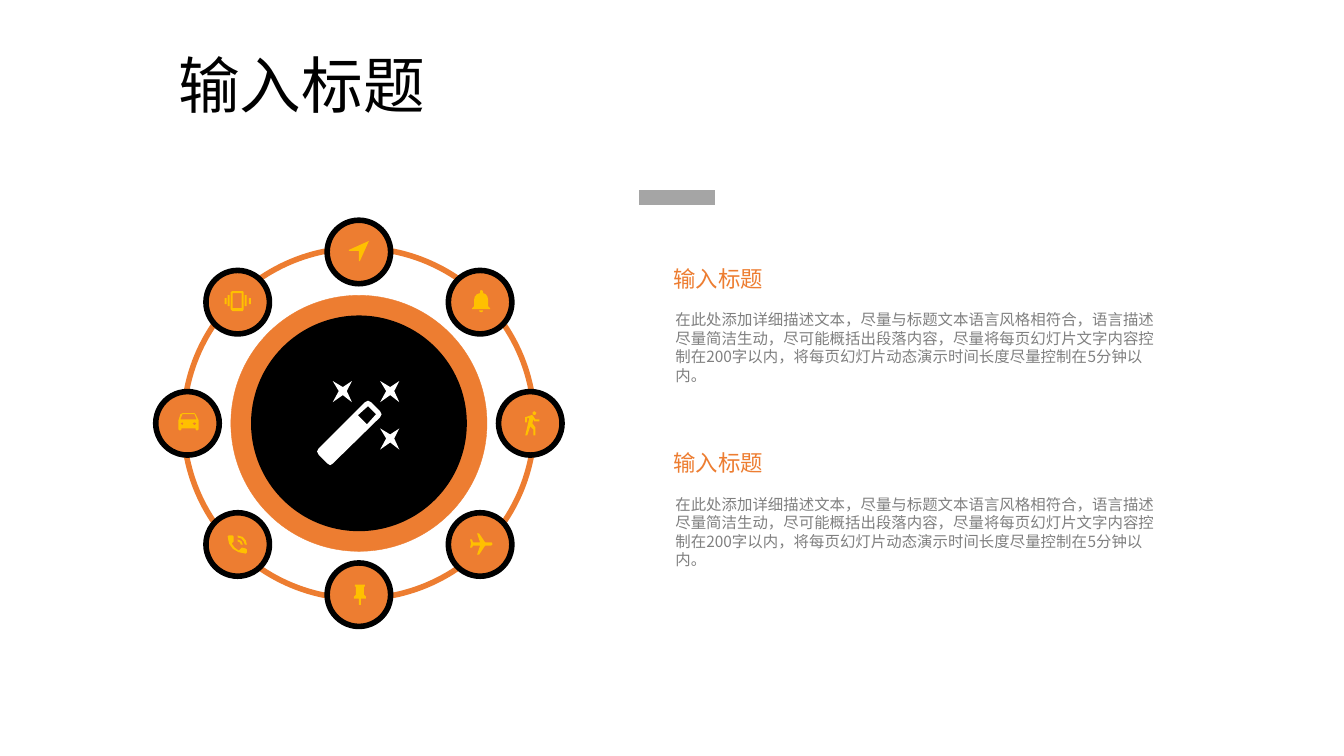
import math
from lxml import etree
from pptx import Presentation
from pptx.dml.color import RGBColor
from pptx.enum.shapes import MSO_CONNECTOR, MSO_SHAPE
from pptx.enum.text import MSO_ANCHOR
from pptx.oxml.ns import qn
from pptx.util import Inches, Pt

OVAL = MSO_SHAPE.OVAL
STRAIGHT = MSO_CONNECTOR.STRAIGHT
TOP, MIDDLE = MSO_ANCHOR.TOP, MSO_ANCHOR.MIDDLE
ORANGE, BLACK, WHITE, AMBER = "ED7D31", "000000", "FFFFFF", "FFC000"
GREY, BAR = "808080", "A5A5A5"
FONT = "Noto Sans CJK SC"
CX, CY, ORBIT = 3.56, 4.2, 1.7  # centre of the wheel and radius of the badges

prs = Presentation()
prs.slide_width, prs.slide_height = Inches(13.33), Inches(7.5)
s = prs.slides.add_slide(prs.slide_layouts[6])


def paint(sp, fill=None, line=None, width=0):
    sp.shadow.inherit = False
    if fill:
        sp.fill.solid()
        sp.fill.fore_color.rgb = RGBColor.from_string(fill)
    else:
        sp.fill.background()
    if line:
        sp.line.color.rgb = RGBColor.from_string(line)
        sp.line.width = Pt(width)
    else:
        sp.line.fill.background()


def outline(x, y, contours, color):
    """Draw closed contours, in hundredths of an inch around (x, y)."""
    builder = None
    for contour in contours:
        pts = [(px * 10, py * 10) for px, py in contour]
        if builder is None:
            builder = s.shapes.build_freeform(*pts[0], scale=914.4)
        else:
            builder.move_to(*pts[0])
        builder.add_line_segments(pts[1:], close=True)
    paint(builder.convert_to_shape(Inches(x), Inches(y)), color)


# Grey bar
bar = s.shapes.add_connector(STRAIGHT, Inches(6.34), Inches(1.96), Inches(7.09), Inches(1.96))
bar.line.color.rgb = RGBColor.from_string(BAR)
bar.line.width = Pt(11)
etree.SubElement(bar._element.spPr, qn("a:effectLst"))

# Hub and orbit, then eight badges clockwise from the top
circles = [
    (CX, CY, 2.54, ORANGE, ORANGE, 0.25),
    (CX, CY, 2.14, BLACK, None, 0),
    (CX, CY, 3.48, None, ORANGE, 4),
]
centres = []
for i in range(8):
    angle = math.radians(45 * i)
    centres.append((CX + ORBIT * math.sin(angle), CY - ORBIT * math.cos(angle)))
circles += [(x, y, 0.63, ORANGE, BLACK, 4) for x, y in centres]
for x, y, size, fill, line, width in circles:
    sp = s.shapes.add_shape(OVAL, Inches(x - size / 2), Inches(y - size / 2),
                            Inches(size), Inches(size))
    paint(sp, fill, line, width)

# Magic wand with three sparkles
sparkle = [(0, 4), (9, 11), (4, 0), (9, -10), (0, -4), (-10, -10), (-4, 0), (-10, 11)]
for dx, dy in [(-0.16, -0.32), (0.31, 0.15), (0.31, -0.32)]:
    outline(CX + dx, CY + dy, [sparkle], WHITE)
wand = [
    [(12, -21), (9, -22.5), (6, -21), (-40, 25), (-41.5, 28), (-40, 31), (-31, 40),
     (-28.5, 41.5), (-26, 40), (21, -6), (22.5, -9), (21, -12)],
    [(8, 1), (-1, -8), (9, -17), (17, -9)],
]
outline(CX, CY, wand, WHITE)

# Badge icons
arrow = [[(-10, -1), (0, -1), (0, 9), (1, 9), (10, -11), (-10, -2)]]
bell = [
    [(1, 10), (2.4, 9.5), (3, 8), (-1, 8), (-0.4, 9.5)],
    [(8, 4), (8, -2), (7.3, -5.5), (5.5, -8), (3, -9), (3, -10), (2.4, -11.5), (1, -12),
     (0, -11.5), (0, -9), (-3, -8), (-5.3, -5.5), (-6, -2), (-6, 4), (-8, 6), (-8, 7),
     (10, 7), (10, 6)],
]
walker = [
    [(4, -8), (5.6, -9), (6, -10.5), (4, -12), (2.4, -11), (2.4, -9)],
    [(4, -2), (9, -2), (9, -4), (5, -4), (3, -7), (2, -8), (1, -8), (-5, -6), (-5, -1),
     (-3, -1), (-3, -5), (-1, -5), (-5, 12), (-3, 12), (0, 3), (3, 6), (3, 12), (5, 12),
     (5, 4), (2, 0), (3, -4)],
]
plane = [[(12, -1), (11.5, -2), (5, -2), (-1, -11), (-3, -11), (0, -2), (-7, -2), (-8, -5),
          (-10, -5), (-9, -1), (-10, 3), (-8, 3), (-7, 1), (0, 1), (-3, 10), (-1, 10),
          (5, 1), (11, 1), (12, 0)]]
pin = [[(5, 0), (5, -8), (6, -8), (6, -10), (-4, -10), (-4, -8), (-3, -8), (-3, 0), (-5, 2),
        (-5, 4), (0, 4), (0, 10), (2, 10), (2, 4), (7, 4), (7, 2)]]
phone = [
    [(8, 4), (4, 3), (3, 4), (1, 6), (-3, 3), (-6, -1), (-4, -3), (-4, -8), (-5, -9),
     (-9, -9), (-10, -8), (-8.6, -1), (-4.8, 4.3), (1, 7.7), (8, 9), (9, 8), (9, 5)],
    [(7, 0), (9, 0), (8, -4), (5, -7.5), (0, -9), (0, -7), (3.5, -6), (6, -3)],
    [(3, 0), (5, 0), (3.6, -3.5), (0, -5), (0, -3), (2.2, -2)],
]
car = [
    [(8, -9), (7, -10), (-5, -10), (-7, -9), (-9, -3), (-9, 6), (-8, 7), (-7, 7), (-6, 6),
     (-6, 5), (8, 5), (8, 6), (9, 7), (10, 7), (11, 6), (11, -3)],
    [(-5, 2), (-7, 0), (-5, -1), (-4, 0)],
    [(7, 2), (5, 0), (7, -1), (9, 0)],
    [(-7, -4), (-5, -9), (7, -9), (9, -4)],
]
vibration = [
    [(5, -11), (-5, -11), (-7, -10), (-7, 7), (-5, 9), (5, 9), (6, 7), (6, -10)],
    [(4, 6), (-5, 6), (-5, -9), (4, -9)],
]
for x1, y1, x2, y2 in [(-13, -4, -11, 2), (-10, -7, -8, 4), (7, -7, 9, 4), (11, -4, 13, 2)]:
    vibration.append([(x1, y1), (x2, y1), (x2, y2), (x1, y2)])
icons = [arrow, bell, walker, plane, pin, phone, car, vibration]
for (x, y), icon in zip(centres, icons):
    outline(x, y, icon, AMBER)

# Title, and two blocks of heading and description
heading = "输入标题"
description = ("在此处添加详细描述文本，尽量与标题文本语言风格相符合，语言描述尽量简洁生动，"
               "尽可能概括出段落内容，尽量将每页幻灯片文字内容控制在200字以内，"
               "将每页幻灯片动态演示时间长度尽量控制在5分钟以内。")
texts = [(1.67, 0.43, 10, 0.89, heading, 44, BLACK, 0.1, 0.05, MIDDLE, 0.9)]
for y in (2.61, 4.44):
    texts.append((6.66, y, 2.41, 0.43, heading, 16, ORANGE, 0.02, 0.02, TOP, 1))
    texts.append((6.6, y + 0.42, 4.96, 0.84, description, 11, GREY, 0.1, 0.05, TOP, 1))
for x, y, w, h, text, size, color, pad_x, pad_y, anchor, spacing in texts:
    tf = s.shapes.add_textbox(Inches(x), Inches(y), Inches(w), Inches(h)).text_frame
    tf.word_wrap = True
    tf.vertical_anchor = anchor
    tf.margin_left = tf.margin_right = Inches(pad_x)
    tf.margin_top = tf.margin_bottom = Inches(pad_y)
    p = tf.paragraphs[0]
    p.line_spacing = spacing
    r = p.add_run()
    r.text = text
    r.font.size = Pt(size)
    r.font.name = FONT
    r.font.color.rgb = RGBColor.from_string(color)
    etree.SubElement(r._r.get_or_add_rPr(), qn("a:ea")).set("typeface", FONT)

prs.save("out.pptx")
